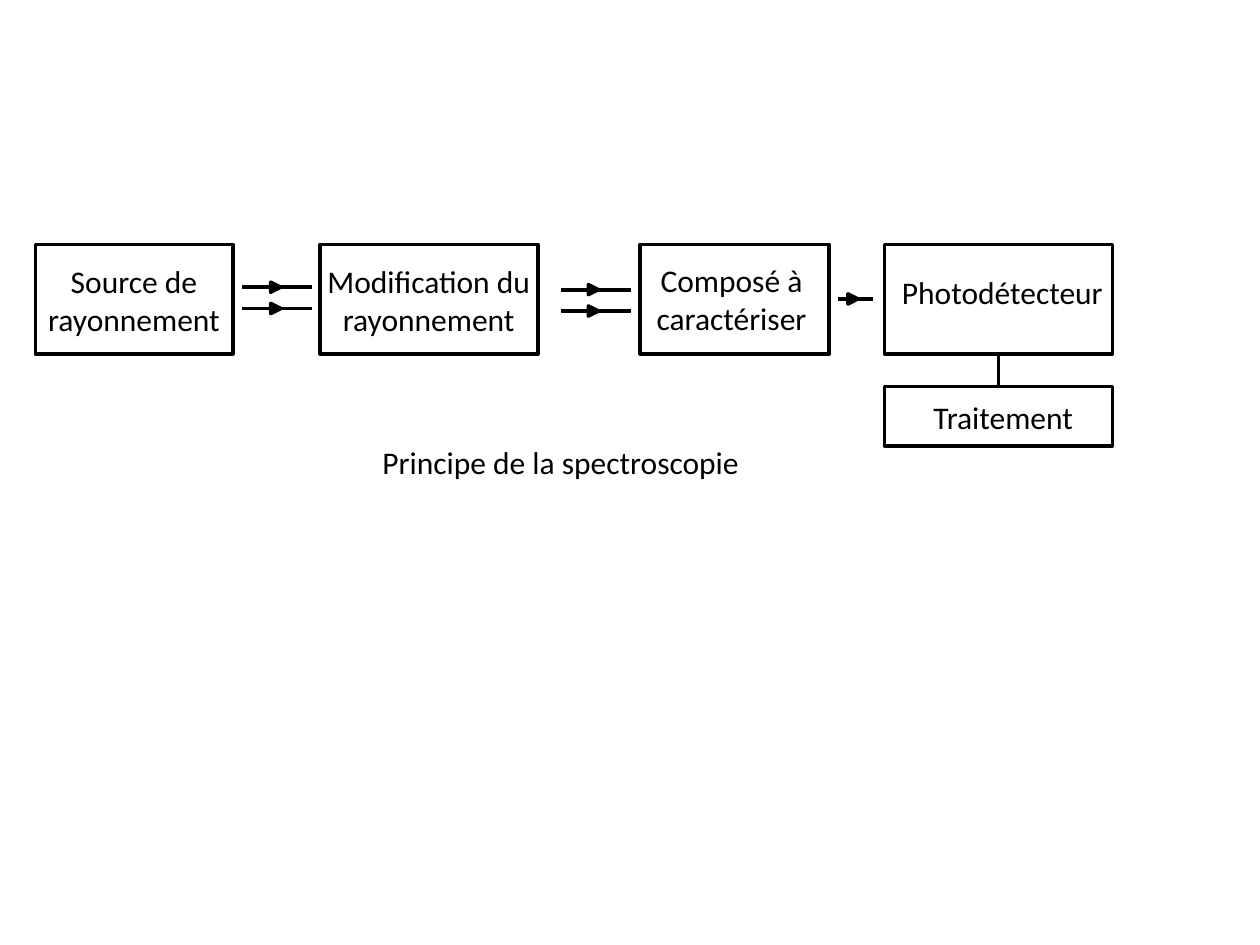
import pptx
import pptx.dml.color
import pptx.enum.shapes
import pptx.enum.text
import pptx.oxml
import pptx.oxml.ns
import pptx.util

Pt = pptx.util.Pt
SHAPES = pptx.enum.shapes.MSO_SHAPE
ALIGN = pptx.enum.text.PP_ALIGN
BLACK = "000000"
ROW_TOP, ROW_HEIGHT = 139.7, 62.6


def color(value):
    return pptx.dml.color.RGBColor.from_string(value)


def add_text(slide, text, left, top, width, height, size=18, font="Calibri",
             ink=BLACK, align=ALIGN.CENTER):
    label = slide.shapes.add_textbox(Pt(left), Pt(top), Pt(width), Pt(height))
    label.text_frame.word_wrap = True
    label.text_frame.text = text
    for paragraph in label.text_frame.paragraphs:
        paragraph.alignment = align
        for run in paragraph.runs:
            run.font.size = Pt(size)
            run.font.name = font
            run.font.color.rgb = color(ink)


def add_outlined(slide, kind, left, top, width, height, fill=None):
    outlined = slide.shapes.add_shape(kind, Pt(left), Pt(top), Pt(width), Pt(height))
    outlined.shadow.inherit = False
    if fill:
        outlined.fill.solid()
        outlined.fill.fore_color.rgb = color(fill)
    else:
        outlined.fill.background()
    outlined.line.color.rgb = color(BLACK)
    outlined.line.width = Pt(2)
    return outlined


def add_line(slide, x1, y1, x2, y2, weight=2.25):
    line = slide.shapes.add_connector(
        pptx.enum.shapes.MSO_CONNECTOR.STRAIGHT, Pt(x1), Pt(y1), Pt(x2), Pt(y2))
    line.line.color.rgb = color(BLACK)
    line.line.width = Pt(weight)
    properties = line._element.spPr
    properties.append(pptx.oxml.parse_xml(
        "<a:effectLst %s/>" % pptx.oxml.ns.nsdecls("a")))


def add_stage(slide, box, text, text_box, align=ALIGN.CENTER):
    """Outlined box of the chain with its label."""
    add_outlined(slide, SHAPES.RECTANGLE, *box)
    add_text(slide, text, *text_box, align=align)


def add_rays(slide, left, top, width, head_offset, count, gap=12.2, head=5.8):
    """Parallel rays, each with an arrowhead along its length."""
    for index in range(count):
        y = top + index * gap
        add_line(slide, left + width, y, left, y)
        arrowhead = add_outlined(slide, SHAPES.ISOSCELES_TRIANGLE,
                                 left + head_offset, y - head / 2, head, head, BLACK)
        arrowhead.rotation = 90


def add_spectroscopy_chain(slide):
    # Stages: left, width, label, label box, alignment
    stages = [
        (20.2, 113, "Source de\nrayonnement", (8.6, 146, 136, 51), ALIGN.CENTER),
        (182.9, 124.6, "Modification du rayonnement", (177, 146, 136, 51), ALIGN.CENTER),
        (365.8, 108, "Composé à caractériser", (365.8, 145.5, 104.4, 51), ALIGN.CENTER),
        (505.4, 130.3, "Photodétecteur", (508.3, 152.6, 135.4, 51), ALIGN.LEFT),
    ]
    for left, width, text, text_box, align in stages:
        add_stage(slide, (left, ROW_TOP, width, ROW_HEIGHT), text, text_box, align)

    # Processing, below the detector
    detector_left, detector_width = stages[-1][:2]
    processing_top = 221
    add_stage(slide, (detector_left, processing_top, detector_width, 33.8),
              "Traitement", (526.3, 223.9, 98.6, 29), ALIGN.LEFT)
    middle = detector_left + detector_width / 2
    add_line(slide, middle, ROW_TOP + ROW_HEIGHT, middle, processing_top, weight=1.5)

    # Radiation between the stages
    add_rays(slide, 138.3, 164.1, 40, 16.4, count=2)
    add_rays(slide, 320.4, 165.5, 40, 15.8, count=2)
    add_rays(slide, 478.9, 170.8, 20, 5.6, count=1)


def main():
    presentation = pptx.Presentation()
    presentation.slide_width, presentation.slide_height = Pt(720), Pt(540)
    slide = presentation.slides.add_slide(presentation.slide_layouts[6])
    add_spectroscopy_chain(slide)
    # Caption
    add_text(slide, "Principe de la spectroscopie", 119.5, 249.8, 401.8, 29)
    presentation.save("out.pptx")


if __name__ == "__main__":
    main()
